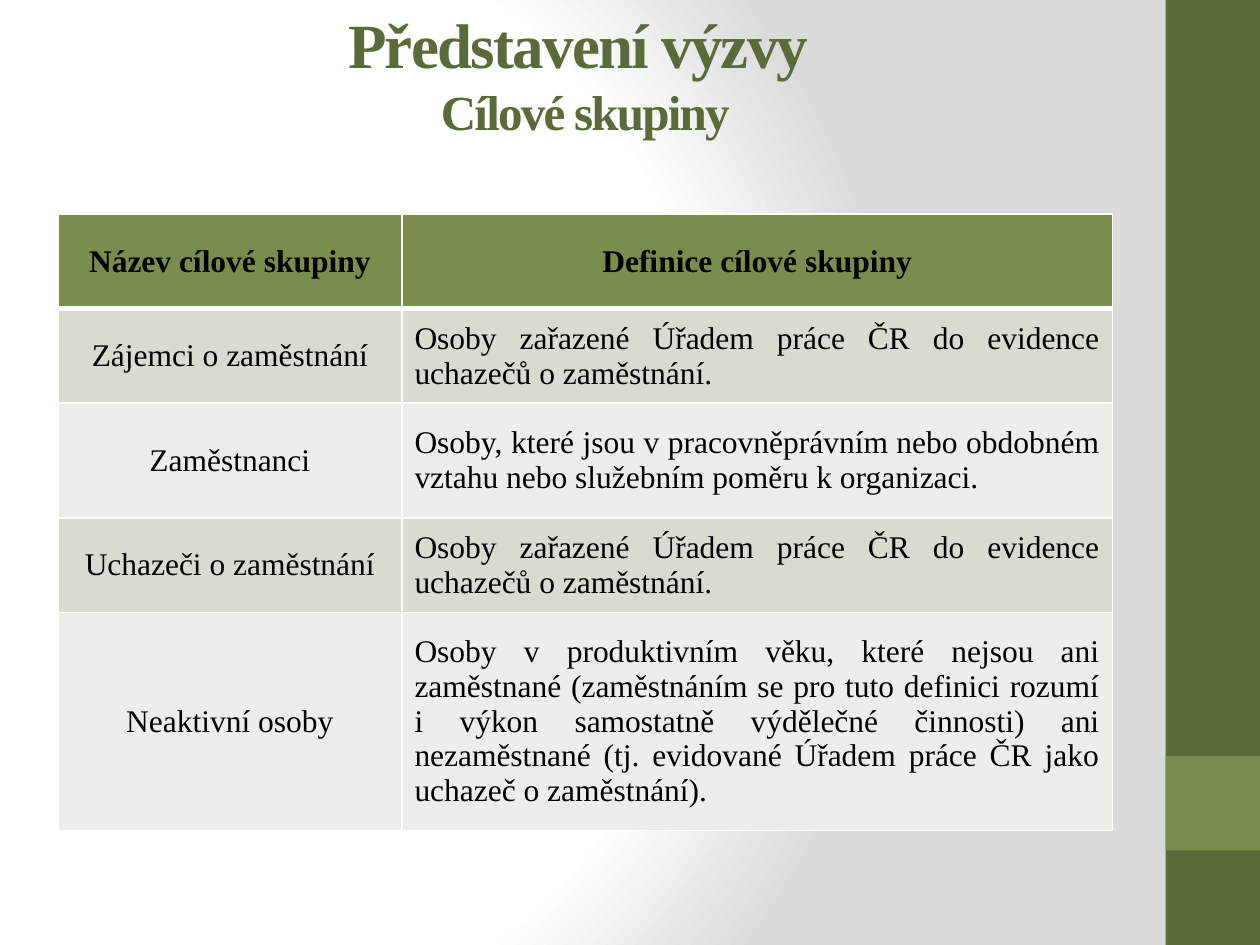
from lxml import etree
from pptx import Presentation
from pptx.dml.color import RGBColor
from pptx.enum.shapes import MSO_SHAPE
from pptx.enum.text import MSO_ANCHOR, MSO_AUTO_SIZE, PP_ALIGN
from pptx.oxml import parse_xml
from pptx.oxml.ns import nsdecls
from pptx.util import Inches, Pt

RECTANGLE = MSO_SHAPE.RECTANGLE
MIDDLE = MSO_ANCHOR.MIDDLE
NO_AUTOFIT = MSO_AUTO_SIZE.NONE
CENTER, JUSTIFY = PP_ALIGN.CENTER, PP_ALIGN.JUSTIFY
FONT = "Times New Roman"
COLORS = {
    "dark": "5A6A39", "green": "798E4C", "band": "D7DBD0", "light": "ECEEE9",
    "white": "FFFFFF", "gray": "DADADA", "black": "000000",
}


def rgb(name):
    return RGBColor.from_string(COLORS[name])


def set_borders(cell, bottom_width):
    """Draw white lines around a cell, 1 pt except at the bottom."""
    properties = cell._tc.get_or_add_tcPr()
    widths = {"lnL": 1, "lnR": 1, "lnT": 1, "lnB": bottom_width}
    for position, (tag, width) in enumerate(widths.items()):
        properties.insert(position, parse_xml(
            f'<a:{tag} {nsdecls("a")} w="{Pt(width)}"><a:solidFill>'
            f'<a:srgbClr val="{COLORS["white"]}"/></a:solidFill></a:{tag}>'))


deck = Presentation()
deck.slide_width, deck.slide_height = Inches(10), Inches(7.5)
page = deck.slides.add_slide(deck.slide_layouts[5])

# Background: circular gradient from white to gray
page.background.fill.gradient()
gradient = page.background._cSld.bg.bgPr.find(".//{*}gradFill")
for child in list(gradient):
    gradient.remove(child)
stops = etree.SubElement(gradient, gradient.tag.replace("gradFill", "gsLst"))
for position, name in ((0, "white"), (75, "white"), (100, "gray")):
    stops.append(parse_xml(
        f'<a:gs {nsdecls("a")} pos="{position * 1000}">'
        f'<a:srgbClr val="{COLORS[name]}"/></a:gs>'))
gradient.append(parse_xml(
    f'<a:path {nsdecls("a")} path="circle">'
    '<a:fillToRect l="20000" t="50000" r="100000" b="50000"/></a:path>'))

# Side bar
for top, height, color in ((0, 7.5, "dark"), (6, 0.75, "green")):
    bar = page.shapes.add_shape(
        RECTANGLE, Inches(9.25), Inches(top), Inches(0.75), Inches(height))
    bar.shadow.inherit = False
    bar.fill.solid()
    bar.fill.fore_color.rgb = rgb(color)
    bar.line.fill.background()

# Title
title = page.shapes.title
title.left, title.top = Inches(0.48), Inches(0.6)
title.width, title.height = Inches(8.33), Inches(0.69)
frame = title.text_frame
frame.auto_size = NO_AUTOFIT
frame.word_wrap = True
frame.vertical_anchor = MIDDLE
heading = frame.paragraphs[0]
heading.alignment = CENTER
for text, size in (("Představení výzvy ", 36), ("Cílové skupiny", 28)):
    span = heading.add_run()
    span.text = text
    span.font.name = FONT
    span.font.size = Pt(size)
    span.font.bold = True
    span.font.color.rgb = rgb("dark")
    span._r.get_or_add_rPr().set("spc", "-100")
    heading.add_line_break()

# Table of target groups
ROWS = [
    ("Název cílové skupiny", "Definice cílové skupiny"),
    ("Zájemci o zaměstnání",
     "Osoby zařazené Úřadem práce ČR do evidence uchazečů o zaměstnání."),
    ("Zaměstnanci",
     "Osoby, které jsou v pracovněprávním nebo obdobném vztahu nebo "
     "služebním poměru k organizaci."),
    ("Uchazeči o zaměstnání",
     "Osoby zařazené Úřadem práce ČR do evidence uchazečů o zaměstnání."),
    ("Neaktivní osoby",
     "Osoby v produktivním věku, které nejsou ani zaměstnané (zaměstnáním "
     "se pro tuto definici rozumí i výkon samostatně výdělečné činnosti) ani "
     "nezaměstnané (tj. evidované Úřadem práce ČR jako uchazeč o zaměstnání)."),
]
table = page.shapes.add_table(
    len(ROWS), 2, Inches(0.46), Inches(1.7), Inches(8.37), Inches(4.89)).table
for column, width in zip(table.columns, (2.73, 5.64)):
    column.width = Inches(width)
for row, height in zip(table.rows, (0.75, 0.75, 0.91, 0.75, 1.73)):
    row.height = Inches(height)

for row_index, texts in enumerate(ROWS):
    is_header = row_index == 0
    fill = "green" if is_header else ("light", "band")[row_index % 2]
    for column_index, text in enumerate(texts):
        cell = table.cell(row_index, column_index)
        cell.text = text
        cell.vertical_anchor = MIDDLE
        cell.fill.solid()
        cell.fill.fore_color.rgb = rgb(fill)
        set_borders(cell, 3 if is_header else 1)
        para = cell.text_frame.paragraphs[0]
        para.alignment = CENTER if is_header or column_index == 0 else JUSTIFY
        para.font.name = FONT
        para.font.size = Pt(18)
        para.font.bold = is_header
        para.font.color.rgb = rgb("black")

deck.save("out.pptx")
